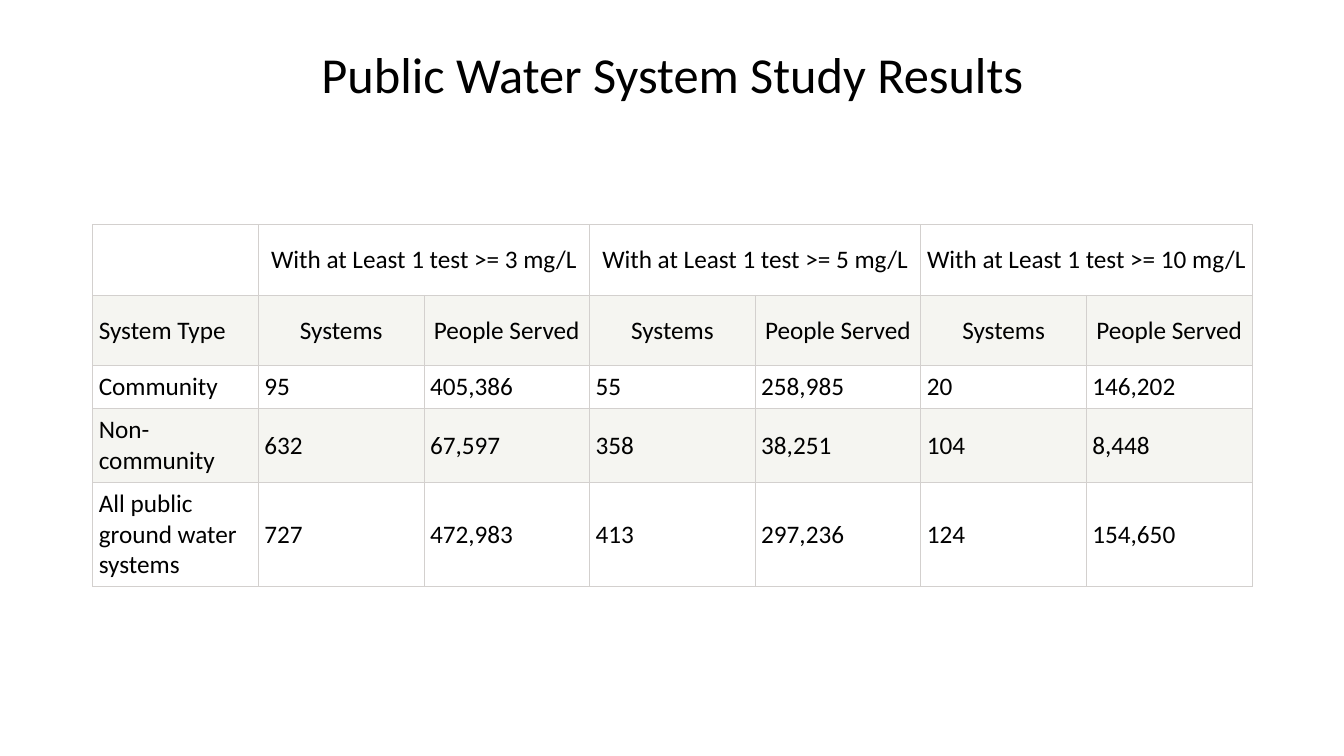
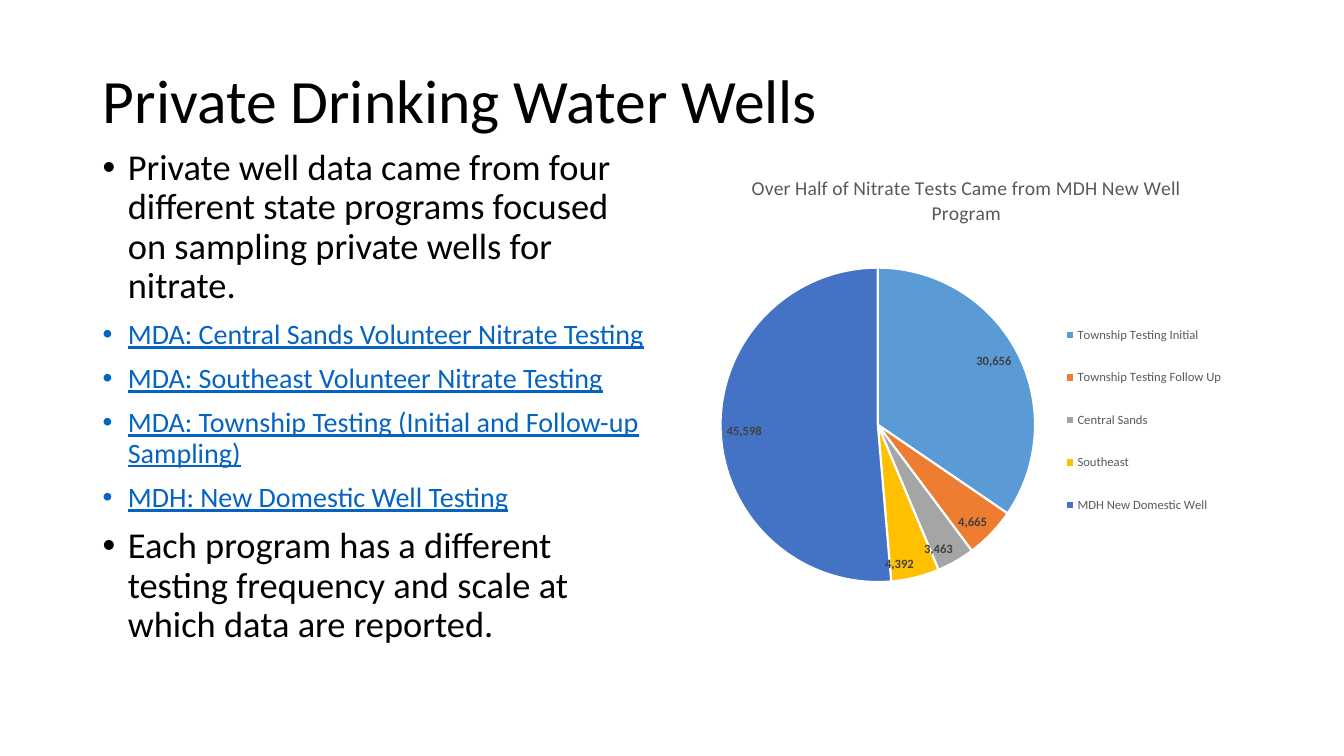
from dataclasses import dataclass

from lxml.etree import SubElement
from pptx import Presentation
from pptx.chart.data import CategoryChartData
from pptx.dml.color import RGBColor
from pptx.enum.chart import XL_CHART_TYPE as ChartType, XL_LABEL_POSITION as LabelPosition, XL_LEGEND_POSITION as LegendPosition
from pptx.enum.text import MSO_ANCHOR as Anchor, MSO_AUTO_SIZE as AutoSize, PP_ALIGN as Align
from pptx.oxml import parse_xml
from pptx.oxml.ns import nsdecls, qn
from pptx.util import Inches, Pt

FONT = "Calibri"
BLACK, WHITE, BAND, BORDER = "000000", "FFFFFF", "F5F5F1", "D3D0CE"
LINK, GREY, LABEL = "0563C1", "595959", "404040"
LEFT, CONTENT_WIDTH, HALF_WIDTH = 0.92, 11.5, 5.67
LINE_SPACING = 0.9


@dataclass(frozen=True)
class Area:
    left: float
    top: float
    width: float
    height: float

    def lengths(self) -> tuple:
        return tuple(Inches(n) for n in (self.left, self.top, self.width, self.height))


@dataclass(frozen=True)
class Bullet:
    text: str
    size: int = 26
    color: str = BLACK
    underline: bool = False


@dataclass(frozen=True)
class Slice:
    name: str
    value: int
    color: str


LIMITS = (3, 5, 10)
SYSTEM_ROWS = (
    ("Community", "95", "405,386", "55", "258,985", "20", "146,202"),
    ("Non-community", "632", "67,597", "358", "38,251", "104", "8,448"),
    ("All public ground water systems", "727", "472,983", "413", "297,236", "124", "154,650"),
)
ROW_HEIGHTS = (0.7, 0.7, 0.41, 0.7, 1)
PROGRAMS = (
    "MDA: Central Sands Volunteer Nitrate Testing",
    "MDA: Southeast Volunteer Nitrate Testing",
    "MDA: Township Testing (Initial and Follow-up Sampling)",
    "MDH: New Domestic Well Testing",
)
BULLETS = (
    Bullet("Private well data came from four different state programs focused on sampling private wells for nitrate."),
    *(Bullet(name, 20, LINK, True) for name in PROGRAMS),
    Bullet("Each program has a different testing frequency and scale at which data are reported."),
)
SLICES = (
    Slice("Township Testing Initial", 30656, "5B9BD5"),
    Slice("Township Testing Follow Up", 4665, "ED7D31"),
    Slice("Central Sands", 3463, "A5A5A5"),
    Slice("Southeast", 4392, "FFC000"),
    Slice("MDH New Domestic Well", 45598, "4472C4"),
)


def rgb(color: str) -> RGBColor:
    return RGBColor.from_string(color)


def style_font(font, size: float, color: str = BLACK, bold: bool = False) -> None:
    font.name = FONT
    font.size = Pt(size)
    font.bold = bold
    font.color.rgb = rgb(color)


def add_span(para, text: str, size: float, color: str = BLACK):
    span = para.add_run()
    span.text = text
    style_font(span.font, size, color)
    return span


def add_page(deck, title: str, area: Area, size: int, align):
    page = deck.slides.add_slide(deck.slide_layouts[5])
    box = page.shapes.title
    box.left, box.top, box.width, box.height = area.lengths()
    frame = box.text_frame
    frame.auto_size = AutoSize.NONE
    frame.vertical_anchor = Anchor.MIDDLE
    para = frame.paragraphs[0]
    para.alignment = align
    para.line_spacing = LINE_SPACING
    add_span(para, title, size)
    return page


def style_cell(cell, fill: str) -> None:
    cell.fill.solid()
    cell.fill.fore_color.rgb = rgb(fill)
    cell.vertical_anchor = Anchor.MIDDLE
    cell.margin_left = cell.margin_right = cell.margin_top = cell.margin_bottom = Inches(0.06)
    properties = cell._tc.get_or_add_tcPr()
    for index, side in enumerate(("lnL", "lnR", "lnT", "lnB")):
        properties.insert(index, parse_xml(
            f'<a:{side} {nsdecls("a")} w="{Pt(0.75)}"><a:solidFill>'
            f'<a:srgbClr val="{BORDER}"/></a:solidFill></a:{side}>'))


def add_results_table(page, area: Area) -> None:
    limits = [""]
    for limit in LIMITS:
        limits += [f"With at Least 1 test >= {limit} mg/L", ""]
    headings = ["System Type"] + ["Systems", "People Served"] * len(LIMITS)
    rows = (limits, headings, *SYSTEM_ROWS)
    table = page.shapes.add_table(len(rows), len(headings), *area.lengths()).table
    table.first_row = table.horz_banding = False
    for column in table.columns:
        column.width = Inches(area.width / len(headings))
    for r, (texts, height) in enumerate(zip(rows, ROW_HEIGHTS)):
        table.rows[r].height = Inches(height)
        for c, text in enumerate(texts):
            cell = table.cell(r, c)
            style_cell(cell, BAND if r % 2 else WHITE)
            if text:
                para = cell.text_frame.paragraphs[0]
                para.alignment = Align.CENTER if r < 2 and c else Align.LEFT
                add_span(para, text, 18)
    for c in range(1, len(headings), 2):
        table.cell(0, c).merge(table.cell(0, c + 1))


def add_bullets(page, area: Area, bullets: tuple[Bullet, ...]) -> None:
    frame = page.shapes.add_textbox(*area.lengths()).text_frame
    frame.word_wrap = True
    for index, bullet in enumerate(bullets):
        para = frame.add_paragraph() if index else frame.paragraphs[0]
        para.line_spacing = LINE_SPACING
        para.space_before = Pt(10)
        properties = para._p.get_or_add_pPr()
        properties.set("marL", str(Inches(0.25)))
        properties.set("indent", str(-Inches(0.25)))
        SubElement(properties, qn("a:buFont")).set("typeface", "Arial")
        SubElement(properties, qn("a:buChar")).set("char", "•")
        add_span(para, bullet.text, bullet.size, bullet.color).font.underline = bullet.underline


def chart_layout(area: Area, inner: bool = False):
    target = '<c:layoutTarget val="inner"/>' if inner else ""
    return parse_xml(
        f'<c:layout {nsdecls("c")}><c:manualLayout>{target}'
        '<c:xMode val="edge"/><c:yMode val="edge"/>'
        f'<c:x val="{area.left}"/><c:y val="{area.top}"/>'
        f'<c:w val="{area.width}"/><c:h val="{area.height}"/>'
        '</c:manualLayout></c:layout>')


def add_tests_pie(page, area: Area, title: str, slices: tuple[Slice, ...]) -> None:
    data = CategoryChartData(number_format="#,##0")
    data.categories = [part.name for part in slices]
    data.add_series("Series 1", [part.value for part in slices])
    chart = page.shapes.add_chart(ChartType.PIE, *area.lengths(), data).chart
    style_font(chart.font, 10)
    chart.has_title = True
    add_span(chart.chart_title.text_frame.paragraphs[0], title, 14, GREY)
    chart.chart_title.include_in_layout = False

    chart.has_legend = True
    legend = chart.legend
    legend.position = LegendPosition.RIGHT
    legend.include_in_layout = False
    style_font(legend.font, 9, GREY)
    legend._element.find(qn("c:legendPos")).addnext(chart_layout(Area(0.65, 0.3, 0.32, 0.5)))

    plot = chart.plots[0]
    plot.vary_by_categories = True
    plot_area = chart._chartSpace.chart.plotArea
    for old in plot_area.findall(qn("c:layout")):
        plot_area.remove(old)
    plot_area.insert(0, chart_layout(Area(0.07, 0.23, 0.55, 0.66), inner=True))

    plot.has_data_labels = True
    labels = plot.data_labels
    labels.show_value = True
    labels.show_percentage = False
    labels.number_format = "#,##0"
    labels.number_format_is_linked = False
    labels.position = LabelPosition.INSIDE_END
    style_font(labels.font, 9, LABEL, bold=True)
    for index, part in enumerate(slices):
        look = plot.series[0].points[index].format
        look.fill.solid()
        look.fill.fore_color.rgb = rgb(part.color)
        look.line.color.rgb = rgb(WHITE)
        look.line.width = Pt(1.5)


def main() -> None:
    """Build the water study deck."""
    deck = Presentation()
    deck.slide_width, deck.slide_height = Inches(13.33), Inches(7.5)

    page = add_page(deck, "Public Water System Study Results",
                    Area(LEFT, 0.4, CONTENT_WIDTH, 0.74), 36, Align.CENTER)
    add_results_table(page, Area(LEFT, 2.23, CONTENT_WIDTH, 3.58))

    page = add_page(deck, "Private Drinking Water Wells",
                    Area(LEFT, 0.3, CONTENT_WIDTH, 1.45), 44, Align.LEFT)
    add_bullets(page, Area(LEFT, 1.43, HALF_WIDTH, 5.66), BULLETS)
    add_tests_pie(page, Area(6.75, 1.55, HALF_WIDTH, 4.76),
                  "Over Half of Nitrate Tests Came from MDH New Well Program", SLICES)
    deck.save("out.pptx")


if __name__ == "__main__":
    main()
